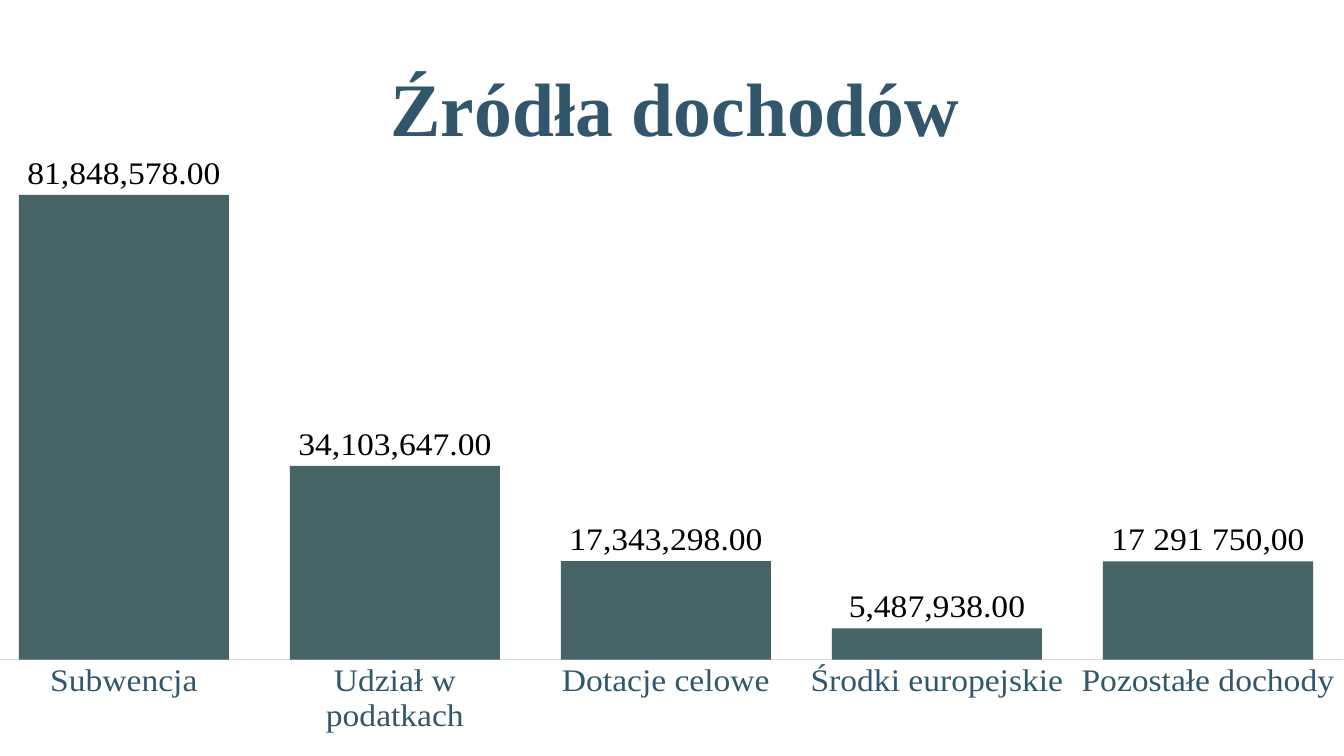
from lxml import etree
from pptx import Presentation
from pptx.chart.data import CategoryChartData
from pptx.dml.color import RGBColor
from pptx.enum.chart import XL_CHART_TYPE, XL_LABEL_POSITION, XL_TICK_MARK
from pptx.enum.text import PP_ALIGN
from pptx.oxml import parse_xml
from pptx.oxml.ns import qn
from pptx.util import Pt

COLUMNS = XL_CHART_TYPE.COLUMN_CLUSTERED
OUTSIDE_END = XL_LABEL_POSITION.OUTSIDE_END
NO_TICK = XL_TICK_MARK.NONE
CENTER = PP_ALIGN.CENTER

PX = 9144
SERIF = "Times New Roman"
BLUE = RGBColor(0x32, 0x56, 0x6C)
TEAL = RGBColor(0x2B, 0x4D, 0x4F)
BLACK = RGBColor(0, 0, 0)
GREY = RGBColor(0xD9, 0xD9, 0xD9)
NUMBER_FORMAT = "#,##0.00"
INCOME = {
    "Subwencja": 81848578,
    "Udział w podatkach": 34103647,
    "Dotacje celowe": 17343298,
    "Środki europejskie": 5487938,
    "Pozostałe dochody": 17291750,
}


def style(font, size, color, name=SERIF):
    font.name = name
    font.size = Pt(size)
    font.color.rgb = color


prs = Presentation()
prs.slide_width = 1333 * PX
prs.slide_height = 750 * PX
slide = prs.slides.add_slide(prs.slide_layouts[6])

heading = slide.shapes.add_textbox(55 * PX, 66 * PX, 1229 * PX, 106 * PX).text_frame
heading.word_wrap = True
heading.text = "Źródła dochodów"
line = heading.paragraphs[0]
line.alignment = CENTER
line.line_spacing = 0.9
line.space_before = Pt(10)
style(line.runs[0].font, 54, BLUE)
line.runs[0].font.bold = True

income_data = CategoryChartData(number_format=NUMBER_FORMAT)
income_data.categories = list(INCOME)
income_data.add_series("Series 1", list(INCOME.values()))
chart = slide.shapes.add_chart(
    COLUMNS, -12 * PX, 132 * PX, 1345 * PX, 596 * PX, income_data
).chart
chart.has_legend = False
chart.has_title = False
style(chart.font, 10, BLACK, "Calibri")

sources = chart.category_axis
sources.major_tick_mark = NO_TICK
sources.minor_tick_mark = NO_TICK
sources.format.line.color.rgb = GREY
sources.format.line.width = Pt(0.75)
style(sources.tick_labels.font, 24, BLUE)
chart.value_axis.visible = False
chart.value_axis.has_major_gridlines = False

columns = chart.plots[0]
columns.gap_width = 29
columns.overlap = -100
columns.vary_by_categories = False
income = columns.series[0]
income.format.fill.solid()
income.format.fill.fore_color.rgb = TEAL
fill_color = income.format.fill._xPr.find(qn("a:solidFill"))[0]
etree.SubElement(fill_color, qn("a:alpha")).set("val", "87000")

amounts = income.data_labels
amounts.show_value = True
amounts.position = OUTSIDE_END
amounts.number_format = NUMBER_FORMAT
amounts.number_format_is_linked = False
style(amounts.font, 24, BLACK)

other_income = income.points[4].data_label
other_income.text_frame.text = "17 291 750,00"
style(other_income.text_frame.paragraphs[0].runs[0].font, 24, BLACK)
other_income.position = OUTSIDE_END

plot_area = chart._chartSpace.chart.plotArea
for old_layout in plot_area.findall(qn("c:layout")):
    plot_area.remove(old_layout)
plot_area.insert(0, parse_xml(
    '<c:layout xmlns:c="http://schemas.openxmlformats.org/drawingml/2006/chart">'
    '<c:manualLayout><c:layoutTarget val="inner"/>'
    '<c:xMode val="edge"/><c:yMode val="edge"/>'
    '<c:x val="0"/><c:y val="0.028"/><c:w val="1"/><c:h val="0.912"/>'
    '</c:manualLayout></c:layout>'
))

prs.save("out.pptx")
